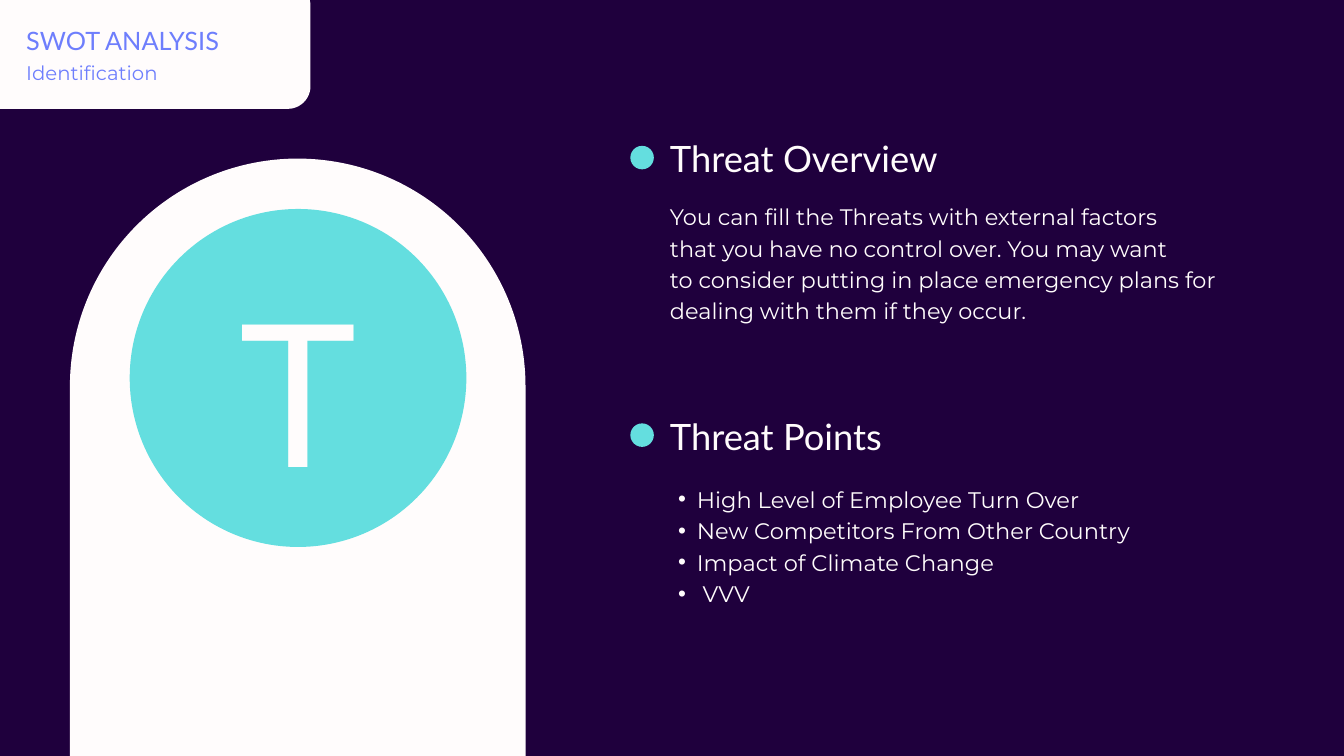
from lxml import etree
from pptx import Presentation
from pptx.dml.color import RGBColor
from pptx.enum.shapes import MSO_SHAPE as SHAPE
from pptx.enum.text import MSO_ANCHOR as ANCHOR, MSO_AUTO_SIZE as AUTO, PP_ALIGN as ALIGN
from pptx.oxml.ns import qn
from pptx.util import Inches, Pt

COLS, ROWS = 20, 11.25
LEADING = 1.4
NIGHT = RGBColor(0x1F, 0x00, 0x3D)
CREAM = RGBColor(0xFF, 0xFC, 0xFC)
TEAL = RGBColor(0x64, 0xDE, 0xDF)
VIOLET = RGBColor(0x6E, 0x7E, 0xFC)

TITLE = {"name": "Lato", "size": Pt(27.1), "color": VIOLET}
SUBTITLE = {"name": "Montserrat", "size": Pt(21.1), "color": VIOLET}
LETTER = {"name": "Lato", "size": Pt(213), "color": CREAM}
HEADING = {"name": "Lato", "size": Pt(38.9), "color": CREAM}
BODY = {"name": "Montserrat", "size": Pt(24), "color": CREAM}
POINTS = {"name": "Montserrat", "size": Pt(24.1), "color": CREAM}

OVERVIEW = [
    "You can fill the Threats with external factors",
    "that you have no control over. You may want",
    "to consider putting in place emergency plans for",
    "dealing with them if they occur.",
]
THREATS = [
    "High Level of Employee Turn Over",
    "New Competitors From Other Country",
    "Impact of Climate Change",
    " VVV",
]


def grid(prs, *cells):
    """Turn columns and rows (left, top, width, height) into slide lengths."""
    units = (prs.slide_width / COLS, prs.slide_height / ROWS) * 2
    return [round(cell * unit) for cell, unit in zip(cells, units)]


def add_panel(prs, s, kind, cells, color, corner=None):
    """Add a plain filled shape, with an optional corner share."""
    sp = s.shapes.add_shape(kind, *grid(prs, *cells))
    sp.shadow.inherit = False
    sp.fill.solid()
    sp.fill.fore_color.rgb = color
    sp.line.fill.background()
    if corner is not None:
        sp.adjustments[0] = corner


def add_bullet(p):
    """Give a paragraph a hanging round bullet."""
    pPr = p._p.get_or_add_pPr()
    pPr.set("marL", str(Inches(0.57)))
    pPr.set("indent", str(Inches(-0.28)))
    etree.SubElement(pPr, qn("a:buFont")).set("typeface", "Arial")
    etree.SubElement(pPr, qn("a:buChar")).set("char", "•")


def fill_text(sp, lines, style, align=ALIGN.LEFT, bullets=False):
    """Write one paragraph per line into a frame without margins."""
    tf = sp.text_frame
    frame = {"word_wrap": True, "auto_size": AUTO.NONE, "vertical_anchor": ANCHOR.TOP,
             "margin_left": 0, "margin_top": 0, "margin_right": 0, "margin_bottom": 0}
    for key, value in frame.items():
        setattr(tf, key, value)
    for i, line in enumerate(lines):
        p = tf.add_paragraph() if i else tf.paragraphs[0]
        p.alignment = align
        p.line_spacing = Pt(round(style["size"].pt * LEADING, 1))
        if bullets:
            add_bullet(p)
        r = p.add_run()
        r.text = line
        for key in ("name", "size"):
            setattr(r.font, key, style[key])
        r.font.color.rgb = style["color"]


def add_text(prs, s, cells, lines, style, **options):
    """Add a text box on the grid."""
    fill_text(s.shapes.add_textbox(*grid(prs, *cells)), lines, style, **options)


def place_title(prs, s, cells, text):
    """Move the title placeholder above the panels and format it."""
    sp = s.shapes.title
    s.shapes._spTree.append(sp._element)
    sp.left, sp.top, sp.width, sp.height = grid(prs, *cells)
    fill_text(sp, [text], TITLE)


def add_heading(prs, s, top, text):
    """Add a section heading with its round marker."""
    add_panel(prs, s, SHAPE.OVAL, (9.38, top + 0.25, 0.35, 0.35), TEAL)
    add_text(prs, s, (9.97, top, 7.08, 0.74), [text], HEADING)


def main():
    """Build the threat slide and save it."""
    prs = Presentation()
    prs.slide_width, prs.slide_height = Inches(COLS), Inches(ROWS)
    s = prs.slides.add_slide(prs.slide_layouts[5])
    s.background.fill.solid()
    s.background.fill.fore_color.rgb = NIGHT

    add_panel(prs, s, SHAPE.ROUNDED_RECTANGLE, (-0.56, -0.25, 5.18, 1.87), CREAM, 0.18)
    place_title(prs, s, (0.39, 0.3, 4.04, 0.5), "SWOT ANALYSIS")
    add_text(prs, s, (0.39, 0.85, 2.84, 0.39), ["Identification"], SUBTITLE)

    add_panel(prs, s, SHAPE.ROUND_2_SAME_RECTANGLE, (1.04, 2.36, 6.78, ROWS - 2.36), CREAM, 0.5)
    add_panel(prs, s, SHAPE.OVAL, (1.93, 3.11, 5.01, 5.03), TEAL)
    add_text(prs, s, (2.71, 3.4, 3.45, 4.01), ["T"], LETTER, align=ALIGN.CENTER)

    add_heading(prs, s, 1.92, "Threat Overview")
    add_text(prs, s, (9.97, 2.96, 9.76, 1.82), OVERVIEW, BODY)
    add_heading(prs, s, 6.05, "Threat Points")
    add_text(prs, s, (9.8, 7.16, 9.08, 1.85), THREATS, POINTS, bullets=True)
    prs.save("out.pptx")


if __name__ == "__main__":
    main()
